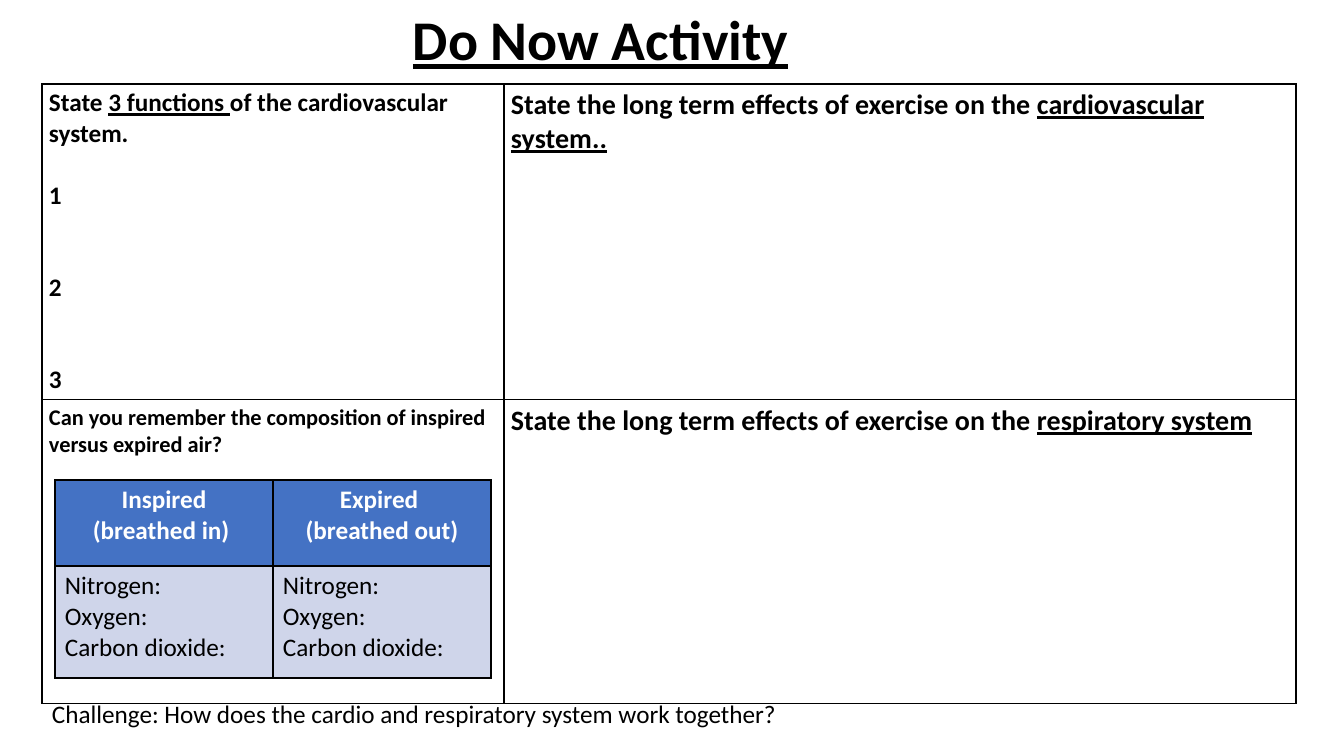
from dataclasses import dataclass

from lxml.etree import SubElement
from pptx import Presentation
from pptx.dml.color import RGBColor
from pptx.enum.text import MSO_AUTO_SIZE, PP_ALIGN
from pptx.oxml.ns import qn
from pptx.util import Emu, Pt

PX_PER_INCH = 100.8
BLACK, WHITE, BLUE, PALE_BLUE = "000000", "FFFFFF", "4472C4", "CFD5EA"


@dataclass(frozen=True)
class Line:
    """One paragraph; its underlined ending or middle sits between start and end."""
    start: str
    underlined: str = ""
    end: str = ""
    space_before: int = 0


@dataclass(frozen=True)
class Cell:
    lines: tuple[Line, ...]
    size: int = 18
    bold: bool = False
    color: str = BLACK
    fill: str = WHITE
    align: PP_ALIGN = PP_ALIGN.LEFT


@dataclass(frozen=True)
class Grid:
    left: int
    top: int
    columns: tuple[int, ...]
    rows: tuple[int, ...]
    margin_x: int
    margin_y: int
    cells: tuple[tuple[Cell, ...], ...]


def px(length: int) -> Emu:
    return Emu(round(length * 914400 / PX_PER_INCH))


def rgb(color: str) -> RGBColor:
    return RGBColor.from_string(color)


def write(frame, lines, *, size: int, bold: bool = False, color: str = BLACK,
          align: PP_ALIGN = PP_ALIGN.LEFT) -> None:
    for index, line in enumerate(lines):
        paragraph = frame.add_paragraph() if index else frame.paragraphs[0]
        paragraph.alignment = align
        paragraph.space_before = Pt(line.space_before)
        for text, underline in ((line.start, False), (line.underlined, True), (line.end, False)):
            if text:
                run = paragraph.add_run()
                run.text = text
                font = run.font
                font.name, font.size = "Calibri", Pt(size)
                font.bold, font.underline = bold, underline
                font.color.rgb = rgb(color)


def add_borders(cell) -> None:
    properties = cell._tc.get_or_add_tcPr()
    for side in ("a:lnL", "a:lnR", "a:lnT", "a:lnB"):
        border = SubElement(properties, qn(side), w=str(Pt(1)))
        SubElement(SubElement(border, qn("a:solidFill")), qn("a:srgbClr"), val=BLACK)


def add_grid(slide, grid: Grid) -> None:
    table = slide.shapes.add_table(
        len(grid.rows), len(grid.columns), px(grid.left), px(grid.top),
        px(sum(grid.columns)), px(sum(grid.rows))).table
    table.first_row = table.horz_banding = False
    for column, width in zip(table.columns, grid.columns):
        column.width = px(width)
    for row, height, contents in zip(table.rows, grid.rows, grid.cells):
        row.height = px(height)
        for cell, content in zip(row.cells, contents):
            cell.margin_left = cell.margin_right = px(grid.margin_x)
            cell.margin_top = cell.margin_bottom = px(grid.margin_y)
            add_borders(cell)
            cell.fill.solid()
            cell.fill.fore_color.rgb = rgb(content.fill)
            write(cell.text_frame, content.lines, size=content.size, bold=content.bold,
                  color=content.color, align=content.align)


def add_text(slide, line: Line, left: int, top: int, width: int, height: int, *,
             wrap: bool = True, **text_format) -> None:
    frame = slide.shapes.add_textbox(px(left), px(top), px(width), px(height)).text_frame
    frame.word_wrap = wrap
    frame.auto_size = MSO_AUTO_SIZE.SHAPE_TO_FIT_TEXT
    write(frame, (line,), **text_format)


def effects_question(system: str) -> Cell:
    start = "State the long term effects of exercise on the "
    return Cell((Line(start, system),), size=20, bold=True)


def air_heading(*lines: str) -> Cell:
    return Cell(tuple(map(Line, lines)), bold=True, color=WHITE, fill=BLUE,
                align=PP_ALIGN.CENTER)


# Questions
functions_question = Cell((
    Line("State ", "3 functions ", "of the cardiovascular system."),
    Line("1", space_before=22),
    Line("2", space_before=44),
    Line("3", space_before=44),
), bold=True)
air_question = Cell(
    (Line("Can you remember the composition of inspired versus expired air?"),),
    size=16, bold=True)
QUESTIONS = Grid(42, 84, (462, 792), (315, 304), 7, 4, (
    (functions_question, effects_question("cardiovascular system..")),
    (air_question, effects_question("respiratory system")),
))

# Composition of inspired and expired air
gases = Cell((Line("Nitrogen:"), Line("Oxygen:"), Line("Carbon dioxide:")), fill=PALE_BLUE)
AIR = Grid(55, 480, (218, 218), (86, 112), 10, 5, (
    (air_heading("Inspired", "(breathed in) "), air_heading("Expired ", "(breathed out)")),
    (gases, gases),
))


def main() -> None:
    presentation = Presentation()
    presentation.slide_width, presentation.slide_height = px(1344), px(756)
    slide = presentation.slides.add_slide(presentation.slide_layouts[6])

    for grid in (QUESTIONS, AIR):
        add_grid(slide, grid)

    # Challenge and title
    add_text(slide, Line("Challenge: How does the cardio and respiratory system work together?"),
             42, 693, 1257, 40, size=18)
    add_text(slide, Line("", "Do Now Activity"), 403, 0, 400, 78, wrap=False,
             size=40, bold=True)

    presentation.save("out.pptx")


if __name__ == "__main__":
    main()
